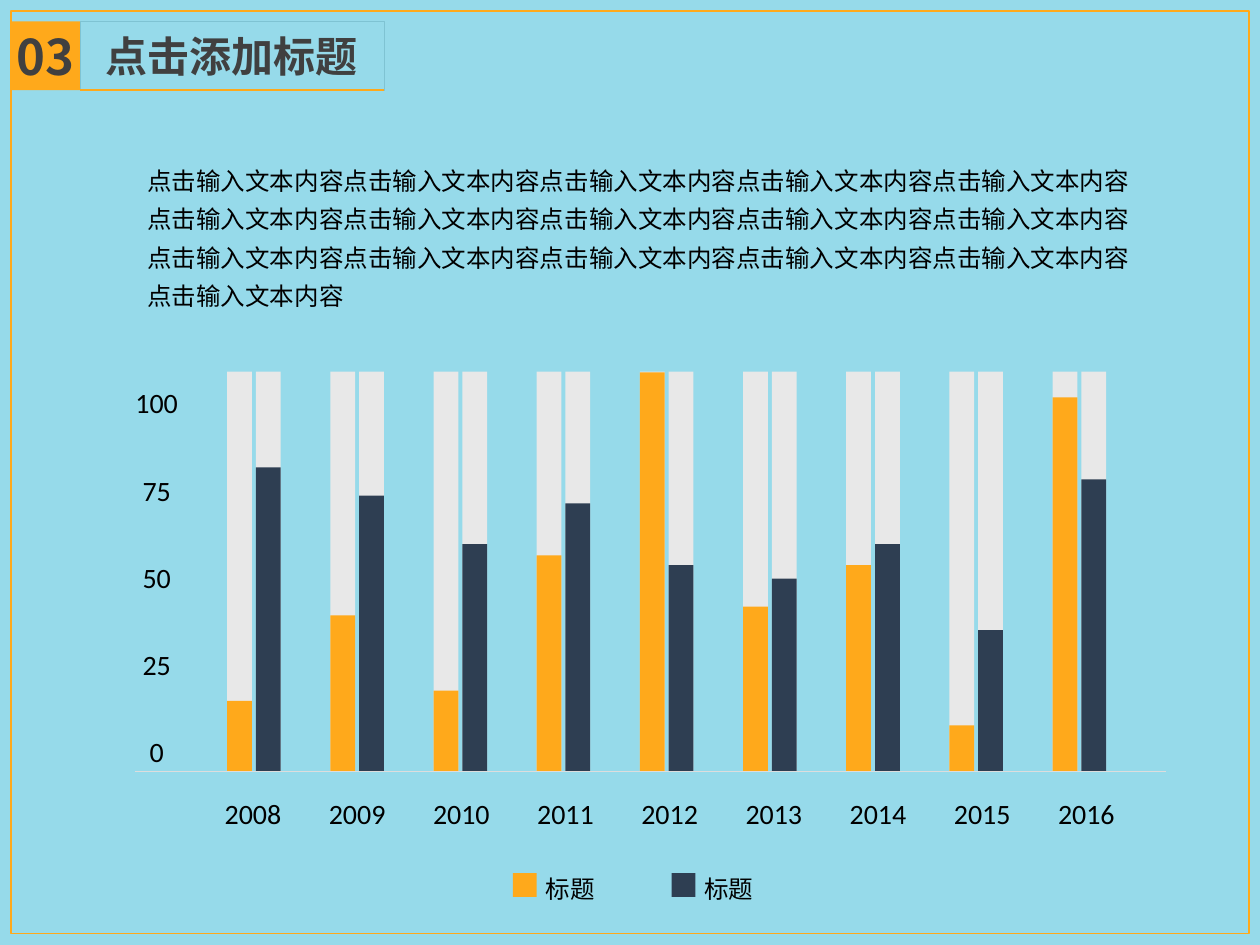
from dataclasses import dataclass

from lxml import etree
from pptx import Presentation
from pptx import util as u
from pptx.dml.color import RGBColor
from pptx.enum import shapes, text
from pptx.oxml.ns import qn


@dataclass(frozen=True)
class Theme:
    """Colours, fonts and type sizes of the deck."""
    sky: str = "96DAEA"
    gold: str = "FFA91B"
    navy: str = "2E3E52"
    track: str = "E8E8E8"
    axis: str = "DDDDDD"
    edge: str = "7FC3D3"
    ink: str = "000000"
    head: str = "404040"
    latin: str = "Calibri"
    han: str = "Noto Sans CJK SC"
    num: int = 28
    title: int = 24
    label: int = 16
    body: int = 14


T = Theme()
DATA = {
    "2008": (17.6, 76), "2009": (39, 69), "2010": (20.2, 56.8),
    "2011": (54, 67), "2012": (99.8, 51.6), "2013": (41.2, 48.2),
    "2014": (51.6, 56.8), "2015": (11.5, 35.3), "2016": (93.5, 73),
}
TICKS = (100, 75, 50, 25, 0)
ALIGN = text.PP_ALIGN


def rgb(code):
    """Turn a hex code into a colour."""
    return RGBColor.from_string(code)


def rect(slide, x, y, w, h, fill=None, line=None, width=1):
    """Draw a flat rectangle, measured in centimetres."""
    box = slide.shapes.add_shape(
        shapes.MSO_SHAPE.RECTANGLE, u.Cm(x), u.Cm(y), u.Cm(w), u.Cm(h))
    box.shadow.inherit = False
    if fill:
        box.fill.solid()
        box.fill.fore_color.rgb = rgb(fill)
    else:
        box.fill.background()
    if line:
        box.line.color.rgb = rgb(line)
        box.line.width = u.Pt(width)
    else:
        box.line.fill.background()
    return box


def rule(slide, x, y, w, code, width):
    """Draw a level line without a shadow."""
    line = slide.shapes.add_connector(
        shapes.MSO_CONNECTOR.STRAIGHT, u.Cm(x), u.Cm(y), u.Cm(x + w), u.Cm(y))
    line.line.color.rgb = rgb(code)
    line.line.width = u.Pt(width)
    etree.SubElement(line._element.spPr, qn("a:effectLst"))


def write(box, words, size, font, code=T.ink, bold=False,
          align=ALIGN.CENTER, space=1.0, mid=False, inset=0):
    """Write one run of text into a shape."""
    frame = box.text_frame
    frame.word_wrap = True
    frame.margin_left = frame.margin_right = u.Cm(inset)
    frame.margin_top = frame.margin_bottom = u.Cm(inset / 2)
    anchor = text.MSO_ANCHOR
    frame.vertical_anchor = anchor.MIDDLE if mid else anchor.TOP
    para = frame.paragraphs[0]
    para.alignment = align
    para.line_spacing = space
    run = para.add_run()
    run.text = words
    run.font.size = u.Pt(size)
    run.font.name = font
    run.font.bold = bold
    run.font.color.rgb = rgb(code)
    east = etree.SubElement(run.font._element, qn("a:ea"))
    east.set("typeface", T.han)


def label(slide, x, y, w, h, words, size=T.label, font=T.latin, **style):
    """Place a text box, measured in centimetres."""
    box = slide.shapes.add_textbox(u.Cm(x), u.Cm(y), u.Cm(w), u.Cm(h))
    write(box, words, size, font, **style)


def header(slide, x, y, w, h):
    """Place the section number and the underlined title."""
    num = rect(slide, x, y, h, h, T.gold)
    write(num, "03", T.num, T.han, T.head, bold=True, mid=True)
    title = rect(slide, x + h, y, w - h, h, line=T.edge, width=0.25)
    write(title, "点击添加标题", T.title, T.han, T.head, bold=True,
          mid=True, inset=0.25)
    rule(slide, x + h, y + h, w - h, T.gold, 1)


def intro(slide, x, y, w, h):
    """Place the opening paragraph."""
    label(slide, x, y, w, h, "点击输入文本内容" * 16, T.body, T.han,
          align=ALIGN.LEFT, space=1.3, inset=0.25)


def bars(slide, x, y, w, h):
    """Place paired bars over tracks, with tick and year labels."""
    base, wide, pair, tall = y + h, 0.5, 0.58, 1.1
    for i, (year, pcts) in enumerate(DATA.items()):
        for j, (pct, code) in enumerate(zip(pcts, (T.gold, T.navy))):
            left = x + 1.86 + 2.08 * i + pair * j
            high = h * pct / 100
            rect(slide, left, y, wide, h, T.track)
            rect(slide, left, base - high, wide, high, code)
        label(slide, x + 1.25 + 2.1 * i, base + 0.17, 2.26, tall, year,
              space=1.5)
    for i, tick in enumerate(TICKS):
        label(slide, x - 0.69, y - 0.05 + 1.76 * i, 2.26, tall, str(tick),
              space=1.5)
    rule(slide, x, base, w, T.axis, 0.5)


def legend(slide, x, y, w, h):
    """Place the colour keys side by side."""
    side = 0.48
    for i, code in enumerate((T.gold, T.navy)):
        left = x + w / 2 * i
        rect(slide, left, y + 0.23, side, side, code)
        label(slide, left + 0.66, y, 2.46, h, "标题", T.body,
              align=ALIGN.LEFT, space=1.5, mid=True)


def main():
    """Build the slide and save it."""
    deck = Presentation()
    deck.slide_width, deck.slide_height = u.Cm(25.4), u.Cm(19.05)
    slide = deck.slides.add_slide(deck.slide_layouts[6])
    slide.background.fill.solid()
    slide.background.fill.fore_color.rgb = rgb(T.sky)
    rect(slide, 0.22, 0.22, 24.96, 18.6, line=T.gold)
    header(slide, 0.22, 0.43, 7.52, 1.39)
    bars(slide, 2.72, 7.49, 20.78, 8.06)
    legend(slide, 10.34, 17.37, 6.4, 0.79)
    intro(slide, 2.72, 3.05, 20.7, 3.38)
    deck.save("out.pptx")


if __name__ == "__main__":
    main()
